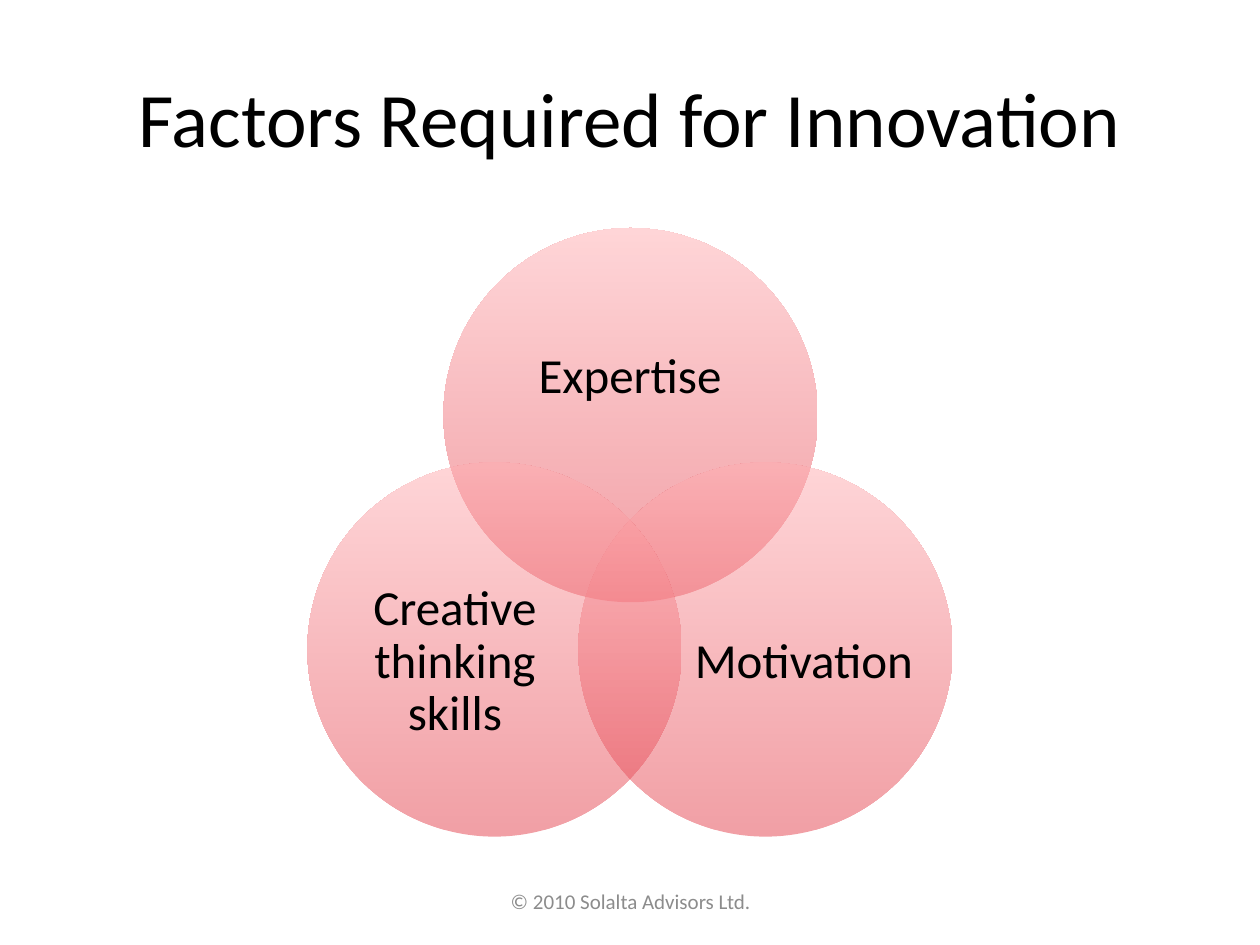
from dataclasses import dataclass

from lxml.etree import SubElement
from pptx import Presentation
from pptx.dml.color import RGBColor
from pptx.enum.shapes import MSO_SHAPE
from pptx.enum.text import MSO_ANCHOR, PP_ALIGN
from pptx.oxml.ns import qn
from pptx.util import Inches, Pt


@dataclass(frozen=True)
class Theme:
    """Colours, font and type sizes of the slide."""
    font: str = "Calibri"
    text: str = "000000"
    muted: str = "8C8C8C"
    circle_bottom: str = "E4404C"
    circle_top: str = "FFADB1"
    circle_alpha: int = 50
    title_size: int = 44
    label_size: int = 28
    footer_size: int = 12


THEME = Theme()
DIAMETER = 2.97
FACTORS = [
    ("Expertise", (3.52, 1.81), (3.91, 2.33, 2.18, 1.34)),
    ("Motivation", (4.59, 3.67), (5.49, 4.44, 1.78, 1.63)),
    ("Creative thinking skills", (2.44, 3.67), (2.72, 4.44, 1.78, 1.63)),
]


def write(tf, text, size, color):
    """Put one centred paragraph into a text frame."""
    tf.word_wrap = True
    tf.vertical_anchor = MSO_ANCHOR.MIDDLE
    p = tf.paragraphs[0]
    p.text = text
    p.alignment = PP_ALIGN.CENTER
    p.font.name = THEME.font
    p.font.size = Pt(size)
    p.font.color.rgb = RGBColor.from_string(color)
    return p


def add_title(s, text):
    """Place and fill the title placeholder."""
    sp = s.shapes.title
    sp.left, sp.top, sp.width, sp.height = map(Inches, (0.5, 0.3, 9, 1.25))
    write(sp.text_frame, text, THEME.title_size, THEME.text)


def add_circle(shapes, left, top):
    """Add a translucent circle that darkens towards the bottom."""
    sp = shapes.add_shape(MSO_SHAPE.OVAL, *map(Inches, (left, top, DIAMETER, DIAMETER)))
    sp.shadow.inherit = False
    sp.line.fill.background()
    sp.fill.gradient()
    sp.fill.gradient_angle = 90
    for stop, color in zip(sp.fill.gradient_stops, (THEME.circle_bottom, THEME.circle_top)):
        stop.color.rgb = RGBColor.from_string(color)
    for clr in sp.fill._xPr.iter(qn("a:srgbClr")):
        SubElement(clr, qn("a:alpha"), val=str(THEME.circle_alpha * 1000))


def add_label(shapes, text, box):
    """Add a circle's label without insets."""
    tf = shapes.add_textbox(*map(Inches, box)).text_frame
    tf.margin_left = tf.margin_top = tf.margin_right = tf.margin_bottom = 0
    write(tf, text, THEME.label_size, THEME.text).line_spacing = 0.9


def add_venn(s, factors):
    """Add the group of overlapping circles and their labels."""
    shapes = s.shapes.add_group_shape().shapes
    for text, corner, label_box in factors:
        add_circle(shapes, *corner)
        add_label(shapes, text, label_box)


def add_footer(s, text):
    """Add the copyright line at the foot of the slide."""
    tf = s.shapes.add_textbox(*map(Inches, (3.42, 6.95, 3.17, 0.4))).text_frame
    write(tf, text, THEME.footer_size, THEME.muted)


def main():
    """Build the slide and save it."""
    prs = Presentation()
    prs.slide_width, prs.slide_height = Inches(10), Inches(7.5)
    s = prs.slides.add_slide(prs.slide_layouts[5])
    add_title(s, "Factors Required for Innovation")
    add_venn(s, FACTORS)
    add_footer(s, "© 2010 Solalta Advisors Ltd.")
    prs.save("out.pptx")


if __name__ == "__main__":
    main()
